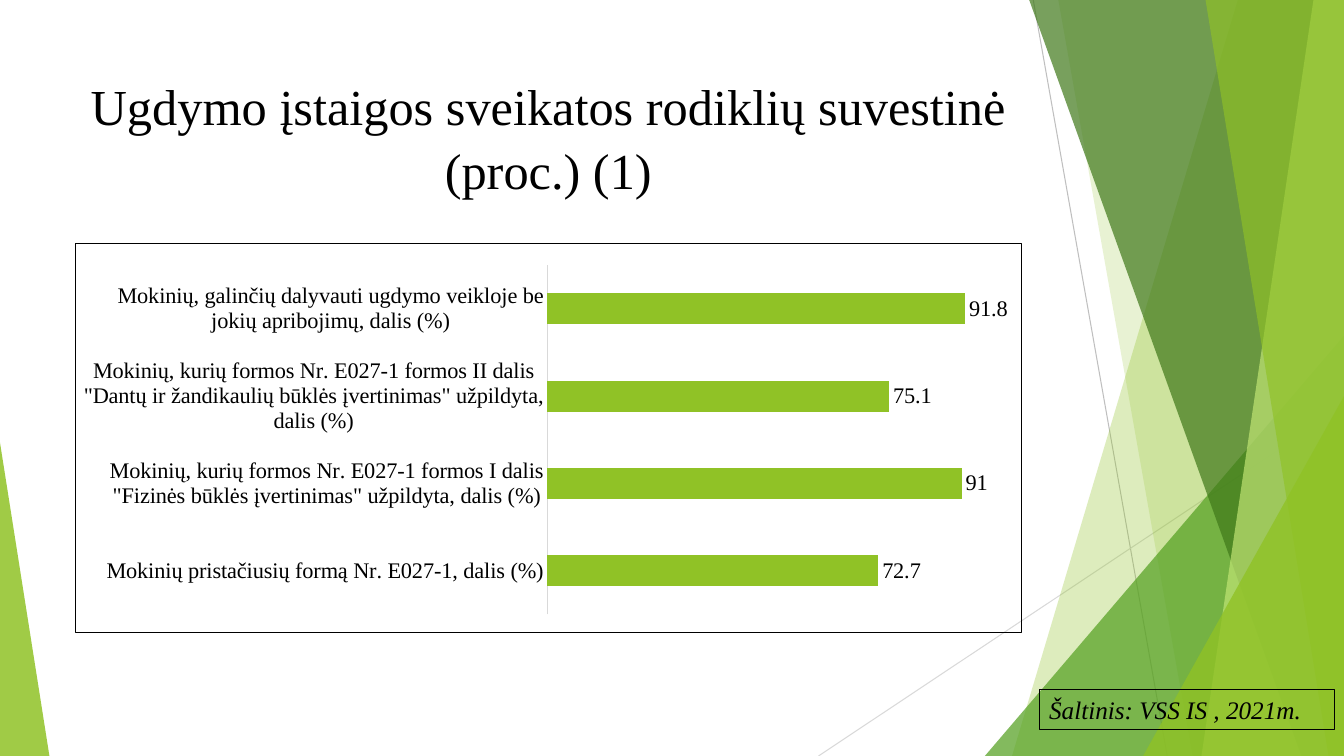
from lxml.etree import SubElement
from pptx import Presentation
from pptx.chart.data import CategoryChartData
from pptx.dml.color import RGBColor
from pptx.enum.chart import XL_CHART_TYPE as ChartType, XL_LABEL_POSITION as LabelPos, XL_TICK_MARK as Tick
from pptx.enum.shapes import MSO_CONNECTOR as Connector, MSO_SHAPE as Shape
from pptx.enum.text import MSO_ANCHOR as Anchor, MSO_AUTO_SIZE as AutoSize, PP_ALIGN as Align
from pptx.oxml import parse_xml
from pptx.oxml.ns import nsdecls, qn
from pptx.util import Inches, Pt

WIDTH, HEIGHT = Inches(13.333), Inches(7.5)
BLACK = RGBColor(0x00, 0x00, 0x00)
SILVER = RGBColor(0xBF, 0xBF, 0xBF)
PALE_GREY = RGBColor(0xD9, 0xD9, 0xD9)
LIME = RGBColor(0x90, 0xC2, 0x26)
LEAF = RGBColor(0x54, 0xA0, 0x21)
FOREST = RGBColor(0x3F, 0x78, 0x19)
PALE_LIME = RGBColor(0xC0, 0xE4, 0x74)
SERIF = "Times New Roman"

RAYS = [((76.88, 0), (86.85, 100), SILVER), ((100, 53.73), (60.9, 100), PALE_GREY)]
BACK_BANDS = [(92.1, 75.3, LIME, 30), (78.75, 88.73, LIME, 20)]
FRONT_BANDS = [(76.58, 96.83, FOREST, 70), (97.73, 89.4, PALE_LIME, 70), (89.7, 98.85, LIME, 65)]
BACK_CORNER = (73.28, 44.4, 26.72, 55.6), 1, LEAF, 72
FRONT_CORNERS = [
    ((85.05, 52.4, 14.95, 47.6), 1, LIME, 80),
    ((0, 58.53, 3.68, 41.47), 0, LIME, 85),
]
TITLE_BOX = (5.55, 8.93, 70.5, 19.2)
CHART_BOX = (5.55, 32.13, 70.5, 51.6)
SOURCE_BOX = (77.33, 91.2, 21.98, 5.33)

INDICATORS = {
    "Mokinių pristačiusių formą Nr. E027-1, dalis (%)": 72.7,
    'Mokinių, kurių formos Nr. E027-1 formos I dalis "Fizinės būklės įvertinimas" užpildyta, dalis (%)': 91,
    'Mokinių, kurių formos Nr. E027-1 formos II dalis "Dantų ir žandikaulių būklės įvertinimas" užpildyta, dalis (%)': 75.1,
    "Mokinių, galinčių dalyvauti ugdymo veikloje be jokių apribojimų, dalis (%)": 91.8,
}
PLOT_AREA = {"x": 0.499, "y": 0.056, "w": 0.481, "h": 0.898}


def across(percent):
    return round(WIDTH * percent / 100)


def down(percent):
    return round(HEIGHT * percent / 100)


def frame(left, top, width, height):
    return across(left), down(top), across(width), down(height)


def apply(target, formats):
    for name, value in formats.items():
        setattr(target, name, value)


def style_font(font, size, **formats):
    apply(font, {"name": SERIF, "size": Pt(size), **formats})
    font.color.rgb = BLACK


def style_line(line, color):
    line.color.rgb = color
    line.width = Pt(0.75)


def tint(shape, color, opacity):
    shape.shadow.inherit = False
    shape.line.fill.background()
    shape.fill.solid()
    shape.fill.fore_color.rgb = color
    solid = shape.fill._xPr.find(qn("a:solidFill"))
    SubElement(solid[0], qn("a:alpha"), val=str(opacity * 1000))


def add_ray(slide, start, end, color):
    ray = slide.shapes.add_connector(
        Connector.STRAIGHT, across(start[0]), down(start[1]), across(end[0]), down(end[1]))
    style_line(ray.line, color)
    SubElement(ray._element.spPr, qn("a:effectLst"))


def add_band(slide, top_left, bottom_left, color, opacity):
    outline = slide.shapes.build_freeform(across(top_left), 0)
    outline.add_line_segments(
        [(WIDTH, 0), (WIDTH, HEIGHT), (across(bottom_left), HEIGHT)], close=True)
    tint(outline.convert_to_shape(), color, opacity)


def add_corner(slide, box, apex, color, opacity):
    corner = slide.shapes.add_shape(Shape.ISOSCELES_TRIANGLE, *frame(*box))
    corner.adjustments[0] = apex
    tint(corner, color, opacity)


def add_decor(slide):
    for ray in RAYS:
        add_ray(slide, *ray)
    for band in BACK_BANDS:
        add_band(slide, *band)
    add_corner(slide, *BACK_CORNER)
    for band in FRONT_BANDS:
        add_band(slide, *band)
    for corner in FRONT_CORNERS:
        add_corner(slide, *corner)


def set_title(slide, text):
    title = slide.shapes.title
    apply(title, dict(zip(("left", "top", "width", "height"), frame(*TITLE_BOX))))
    title.text = text
    apply(title.text_frame, {"word_wrap": True, "vertical_anchor": Anchor.TOP, "auto_size": AutoSize.NONE})
    heading = title.text_frame.paragraphs[0]
    apply(heading, {"alignment": Align.CENTER, "line_spacing": 1.05})
    style_font(heading.runs[0].font, 36)
    slide.shapes._spTree.append(title._element)


def place_plot(chart):
    area = chart._chartSpace.chart.plotArea
    for old in area.findall(qn("c:layout")):
        area.remove(old)
    layout = parse_xml(f"<c:layout {nsdecls('c')}><c:manualLayout/></c:layout>")
    settings = {"layoutTarget": "inner", "xMode": "edge", "yMode": "edge", **PLOT_AREA}
    for tag, value in settings.items():
        SubElement(layout[0], qn(f"c:{tag}"), val=str(value))
    area.insert(0, layout)


def add_border(chart):
    border = parse_xml(
        f"<c:spPr {nsdecls('c', 'a')}><a:noFill/><a:ln w='{Pt(0.75)}'><a:solidFill>"
        f"<a:srgbClr val='{BLACK}'/></a:solidFill></a:ln></c:spPr>")
    chart._chartSpace.chart.addnext(border)


def add_indicator_chart(slide):
    indicators = CategoryChartData()
    indicators.categories = list(INDICATORS)
    indicators.add_series("Series 1", list(INDICATORS.values()))
    chart = slide.shapes.add_chart(ChartType.BAR_CLUSTERED, *frame(*CHART_BOX), indicators).chart
    apply(chart, {"has_legend": False, "has_title": False})
    style_font(chart.font, 10, name="Cabin")
    apply(chart.value_axis, {
        "visible": False, "has_major_gridlines": False, "minimum_scale": 0, "maximum_scale": 100})
    categories = chart.category_axis
    apply(categories, {"major_tick_mark": Tick.NONE, "minor_tick_mark": Tick.NONE})
    style_font(categories.tick_labels.font, 16)
    style_line(categories.format.line, PALE_GREY)

    bars = chart.plots[0]
    apply(bars, {"gap_width": 182, "vary_by_categories": False, "has_data_labels": True})
    apply(bars.data_labels, {"show_value": True, "position": LabelPos.OUTSIDE_END})
    style_font(bars.data_labels.font, 16)
    bars.series[0].format.fill.solid()
    bars.series[0].format.fill.fore_color.rgb = LIME
    place_plot(chart)
    add_border(chart)


def add_source(slide, text):
    source = slide.shapes.add_shape(Shape.RECTANGLE, *frame(*SOURCE_BOX))
    source.shadow.inherit = False
    source.fill.background()
    style_line(source.line, BLACK)
    apply(source.text_frame, {
        "text": text, "word_wrap": True, "vertical_anchor": Anchor.TOP,
        "auto_size": AutoSize.SHAPE_TO_FIT_TEXT})
    citation = source.text_frame.paragraphs[0]
    citation.alignment = Align.LEFT
    style_font(citation.runs[0].font, 18, italic=True)


def main():
    deck = Presentation()
    apply(deck, {"slide_width": WIDTH, "slide_height": HEIGHT})
    slide = deck.slides.add_slide(deck.slide_layouts[5])
    add_decor(slide)
    set_title(slide, "Ugdymo įstaigos sveikatos rodiklių suvestinė (proc.) (1)")
    add_indicator_chart(slide)
    add_source(slide, "Šaltinis: VSS IS , 2021m.")
    deck.save("out.pptx")


if __name__ == "__main__":
    main()
